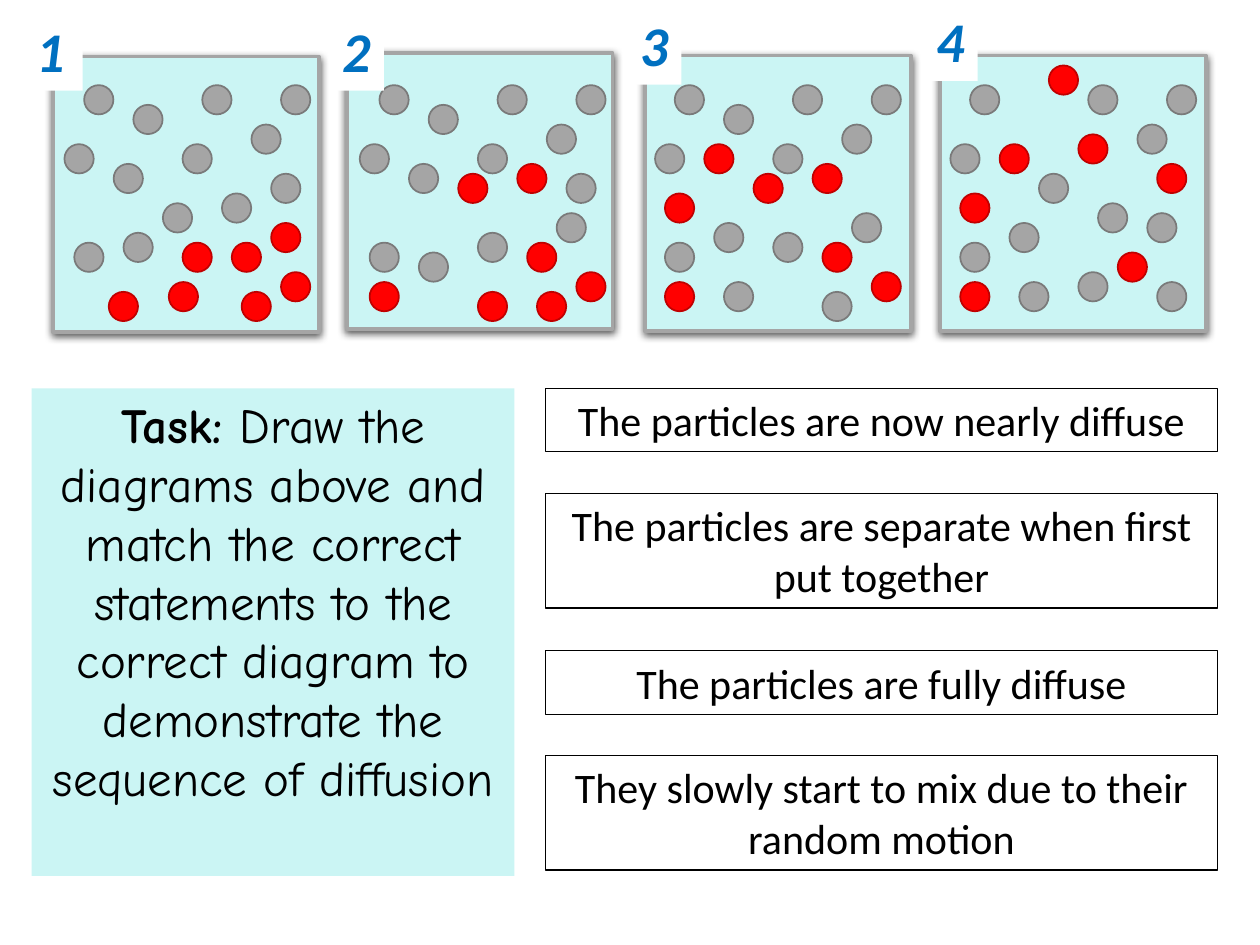
from dataclasses import dataclass

from lxml import etree
from pptx import Presentation
from pptx import util as u
from pptx.dml.color import RGBColor
from pptx.enum import shapes as sh, text as tx
from pptx.oxml import ns

COLOURS = {
    "pale": "CBF5F4", "grey": "A5A5A5", "dark grey": "7A7A7A",
    "red": "FF0000", "dark red": "C00000",
    "blue": "0070C0", "black": "000000", "white": "FFFFFF",
}
GRID = 2.54 * 5 / 64  # particles sit on a grid of 5/64 inch, in cm
PANEL_PITCH = 30 * GRID
FIRST_X, FIRST_Y = 1.3, 1.32
PARTICLE_SIZE = 0.59
PANEL_WIDTH, PANEL_HEIGHT = 5.36, 5.56
LABEL_HEIGHT = 1.63
STATEMENT_LEFT, STATEMENT_WIDTH = 11.0, 13.54


@dataclass
class Panel:
    number: str
    left: float
    top: float
    label_left: float
    label_top: float
    label_width: float
    grey: list[tuple[float, float]]  # grid column and row
    red: list[tuple[float, float]]


@dataclass
class Statement:
    wording: str
    top: float
    height: float


PANELS = [
    Panel("1", 1.07, 1.14, 0.48, 0.2, 1.19,
          [(12, 8), (5, 10), (19, 6), (14, 2), (7, 4), (1, 18), (2, 2),
           (0, 8), (22, 2), (10, 14), (16, 13), (21, 11), (6, 17)],
          [(21, 16), (17, 18), (12, 18), (10.6, 22), (22, 21), (18, 23), (4.5, 23)]),
    Panel("2", 6.99, 1.07, 6.65, 0.2, 1.09,
          [(12, 8), (5, 10), (19, 6), (14, 2), (7, 4), (1, 18), (2, 2),
           (0, 8), (22, 2), (12, 17), (20, 15), (21, 11), (6, 19)],
          [(16, 10), (17, 18), (10, 11), (12, 23), (22, 21), (18, 23), (1, 22)]),
    Panel("3", 13.0, 1.12, 12.65, 0.08, 1.09,
          [(12, 8), (6, 16), (19, 6), (14, 2), (7, 4), (1, 18), (2, 2),
           (0, 8), (22, 2), (12, 17), (20, 15), (17, 23), (7, 22)],
          [(16, 10), (17, 18), (10, 11), (1, 13), (22, 21), (5, 8), (1, 22)]),
    Panel("4", 18.95, 1.12, 18.62, 0, 1.09,
          [(15, 14), (6, 16), (19, 6), (14, 2), (9, 11), (1, 18), (2, 2),
           (0, 8), (22, 2), (13, 21), (20, 15), (21, 22), (7, 22)],
          [(21, 10), (10, 0), (13, 7), (1, 13), (17, 19), (5, 8), (1, 22)]),
]
STATEMENTS = [
    Statement("The particles are now nearly diffuse", 7.83, 1.28),
    Statement("The particles are separate when first put together", 9.95, 2.31),
    Statement("The particles are fully diffuse", 13.12, 1.28),
    Statement("They slowly start to mix due to their random motion", 15.23, 2.31),
]


def rgb(colour: str) -> RGBColor:
    return RGBColor.from_string(COLOURS[colour])


def paint(item, fill: str | None, line: str | None, width: float) -> None:
    if fill:
        item.fill.solid()
        item.fill.fore_color.rgb = rgb(fill)
    if line:
        item.line.color.rgb = rgb(line)
        item.line.width = u.Pt(width)


def add_shape(slide, preset, left: float, top: float, width: float, height: float,
              *, fill: str, line: str, line_width: float):
    item = slide.shapes.add_shape(
        preset, u.Cm(left), u.Cm(top), u.Cm(width), u.Cm(height))
    item.shadow.inherit = False
    paint(item, fill, line, line_width)
    return item


def add_text(slide, runs: list[tuple[str, bool]], left: float, top: float,
             width: float, height: float, *, font: str = "Calibri", size: float = 24,
             colour: str = "black", italic: bool = False,
             align=tx.PP_ALIGN.CENTER, fill: str | None = None,
             line: str | None = None) -> None:
    """Add a text box whose runs are pairs of wording and boldness."""
    box = slide.shapes.add_textbox(u.Cm(left), u.Cm(top), u.Cm(width), u.Cm(height))
    paint(box, fill, line, 0.75)
    box.text_frame.word_wrap = True
    paragraph = box.text_frame.paragraphs[0]
    paragraph.alignment = align
    for wording, bold in runs:
        run = paragraph.add_run()
        run.text = wording
        run.font.name = font
        run.font.size = u.Pt(size)
        run.font.bold = bold
        run.font.italic = italic
        run.font.color.rgb = rgb(colour)


def add_drop_shadow(item) -> None:
    effects = item._element.spPr.find(ns.qn("a:effectLst"))
    shadow = etree.SubElement(
        effects, ns.qn("a:outerShdw"), blurRad=str(u.Pt(4.5)), dist=str(u.Pt(1.5)),
        dir="5400000", algn="ctr", rotWithShape="0")
    tint = etree.SubElement(shadow, ns.qn("a:srgbClr"), val=COLOURS["black"])
    etree.SubElement(tint, ns.qn("a:alpha"), val="63000")


def draw_panel(slide, index: int, panel: Panel) -> None:
    container = add_shape(
        slide, sh.MSO_SHAPE.RECTANGLE, panel.left, panel.top, PANEL_WIDTH,
        PANEL_HEIGHT, fill="pale", line="grey", line_width=2.25)
    add_drop_shadow(container)
    for fill, line, places in (("grey", "dark grey", panel.grey),
                               ("red", "dark red", panel.red)):
        for column, row in places:
            add_shape(slide, sh.MSO_SHAPE.FLOWCHART_CONNECTOR,
                      FIRST_X + index * PANEL_PITCH + column * GRID,
                      FIRST_Y + row * GRID, PARTICLE_SIZE, PARTICLE_SIZE,
                      fill=fill, line=line, line_width=1)
    add_text(slide, [(panel.number, True)], panel.label_left, panel.label_top,
             panel.label_width, LABEL_HEIGHT, size=32, colour="blue", italic=True,
             align=tx.PP_ALIGN.LEFT, fill="white")


def main() -> None:
    deck = Presentation()
    deck.slide_width, deck.slide_height = u.Cm(25.4), u.Cm(19.05)
    slide = deck.slides.add_slide(deck.slide_layouts[6])
    for index, panel in enumerate(PANELS):
        draw_panel(slide, index, panel)
    for statement in STATEMENTS:
        add_text(slide, [(statement.wording, False)], STATEMENT_LEFT, statement.top,
                 STATEMENT_WIDTH, statement.height, line="black")
    add_text(slide, [("Task: ", True),
                     ("Draw the diagrams above and match the correct statements to the "
                      "correct diagram to demonstrate the sequence of diffusion", False)],
             0.64, 7.83, 9.73, 9.83, font="Comic Neue", size=28, fill="pale")
    deck.save("out.pptx")


if __name__ == "__main__":
    main()
